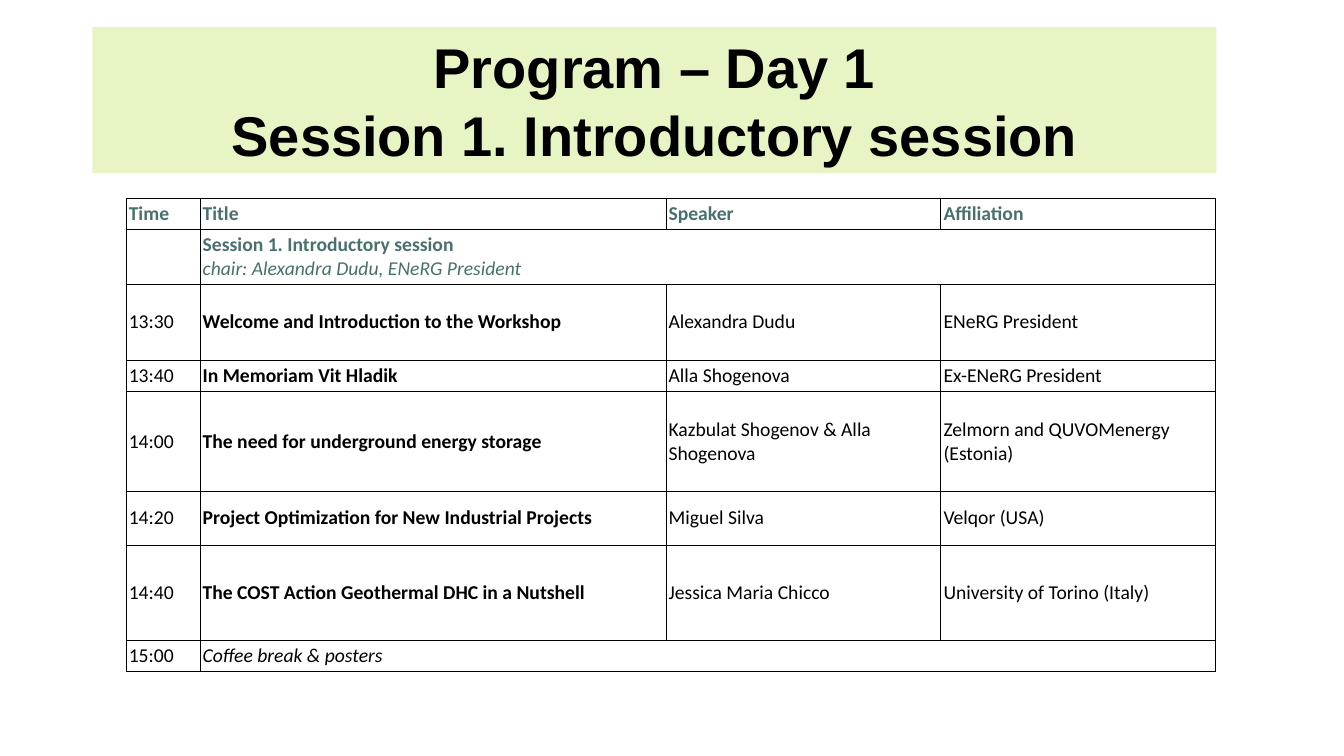
from lxml.etree import SubElement
from pptx import Presentation
from pptx.dml.color import RGBColor
from pptx.enum.shapes import MSO_SHAPE
from pptx.enum.text import MSO_ANCHOR, PP_ALIGN
from pptx.oxml import parse_xml
from pptx.oxml.ns import nsdecls, qn
from pptx.util import Pt

BLACK = RGBColor(0x00, 0x00, 0x00)
TEAL = RGBColor(0x48, 0x71, 0x6E)
LIME = RGBColor(0xD4, 0xEE, 0x92)

HEADING = ["Program – Day 1", "Session 1. Introductory session"]
COLUMNS = ["Time", "Title", "Speaker", "Affiliation"]
SESSION = ["Session 1. Introductory session", "chair: Alexandra Dudu, ENeRG President"]
TALKS = [
    ("13:30", "Welcome and Introduction to the Workshop", "Alexandra Dudu", "ENeRG President"),
    ("13:40", "In Memoriam Vit Hladik", "Alla Shogenova", "Ex-ENeRG President"),
    ("14:00", "The need for underground energy storage",
     "Kazbulat Shogenov & Alla Shogenova", "Zelmorn and QUVOMenergy (Estonia)"),
    ("14:20", "Project Optimization for New Industrial Projects", "Miguel Silva", "Velqor (USA)"),
    ("14:40", "The COST Action Geothermal DHC in a Nutshell",
     "Jessica Maria Chicco", "University of Torino (Italy)"),
]
BREAK = ("15:00", "Coffee break & posters")

COLUMN_WIDTHS = [52.8, 332.8, 196.4, 196.4]
ROW_HEIGHTS = [22.3, 39.2, 54.4, 22.3, 71.4, 38.2, 67.9, 22.3]
TABLE_LEFT, TABLE_TOP = 90, 141.5

HEADER = {"bold": True, "color": TEAL}
CHAIR = {"italic": True, "color": TEAL}
PLAIN = {"color": BLACK}
TALK_TITLE = {"bold": True, "color": BLACK}
PAUSE = {"italic": True, "color": BLACK}


def add_span(para, text, name, size, color, **emphasis):
    span = para.add_run()
    span.text = text
    for key, value in {"name": name, "size": Pt(size), **emphasis}.items():
        setattr(span.font, key, value)
    span.font.color.rgb = color


def write_lines(frame, lines, align=None):
    """Write one paragraph for each (text, font format) pair."""
    for index, (text, style) in enumerate(lines):
        para = frame.add_paragraph() if index else frame.paragraphs[0]
        para.alignment = align
        add_span(para, text, **style)


def format_cell(cell):
    margins = {"margin_left": Pt(2), "margin_right": Pt(2),
               "margin_top": Pt(1.5), "margin_bottom": Pt(1.5)}
    for key, value in {**margins, "vertical_anchor": MSO_ANCHOR.MIDDLE}.items():
        setattr(cell, key, value)
    properties = cell._tc.get_or_add_tcPr()
    for side in ("lnL", "lnR", "lnT", "lnB"):
        properties.append(parse_xml(
            f'<a:{side} {nsdecls("a")} w="{Pt(0.43)}"><a:solidFill>'
            f'<a:srgbClr val="{BLACK}"/></a:solidFill></a:{side}>'))
    cell.fill.background()


def add_heading(slide):
    box = slide.shapes.add_shape(MSO_SHAPE.RECTANGLE, Pt(66), Pt(19.2), Pt(803), Pt(104.5))
    box.shadow.inherit = False
    box.line.fill.background()
    box.fill.solid()
    box.fill.fore_color.rgb = LIME
    color = box.fill._xPr.find(".//" + qn("a:srgbClr"))
    SubElement(color, qn("a:alpha"), val="54000")
    box.text_frame.word_wrap = True
    style = {"name": "Arial", "size": 40, "bold": True, "color": BLACK}
    write_lines(box.text_frame, [(line, style) for line in HEADING], PP_ALIGN.CENTER)


def add_program(slide):
    rows = [[[(text, HEADER)] for text in COLUMNS],
            [[], list(zip(SESSION, (HEADER, CHAIR)))]]
    for talk in TALKS:
        rows.append([[pair] for pair in zip(talk, (PLAIN, TALK_TITLE, PLAIN, PLAIN))])
    rows.append([[pair] for pair in zip(BREAK, (PLAIN, PAUSE))])

    frame = slide.shapes.add_table(
        len(rows), len(COLUMNS), Pt(TABLE_LEFT), Pt(TABLE_TOP),
        Pt(sum(COLUMN_WIDTHS)), Pt(sum(ROW_HEIGHTS)))
    table = frame.table
    table.first_row = table.horz_banding = False
    for column, width in zip(table.columns, COLUMN_WIDTHS):
        column.width = Pt(width)
    for row, height in zip(table.rows, ROW_HEIGHTS):
        row.height = Pt(height)
    for cell in table.iter_cells():
        format_cell(cell)
    for row_index, row in enumerate(rows):
        if len(row) < len(COLUMNS):
            table.cell(row_index, 1).merge(table.cell(row_index, len(COLUMNS) - 1))
        for column_index, lines in enumerate(row):
            styled = [(text, {"name": "Calibri", "size": 14, **style}) for text, style in lines]
            write_lines(table.cell(row_index, column_index).text_frame, styled)


def main():
    deck = Presentation()
    deck.slide_width, deck.slide_height = Pt(960), Pt(540)
    slide = deck.slides.add_slide(deck.slide_layouts[6])
    add_heading(slide)
    add_program(slide)
    deck.save("out.pptx")


if __name__ == "__main__":
    main()
